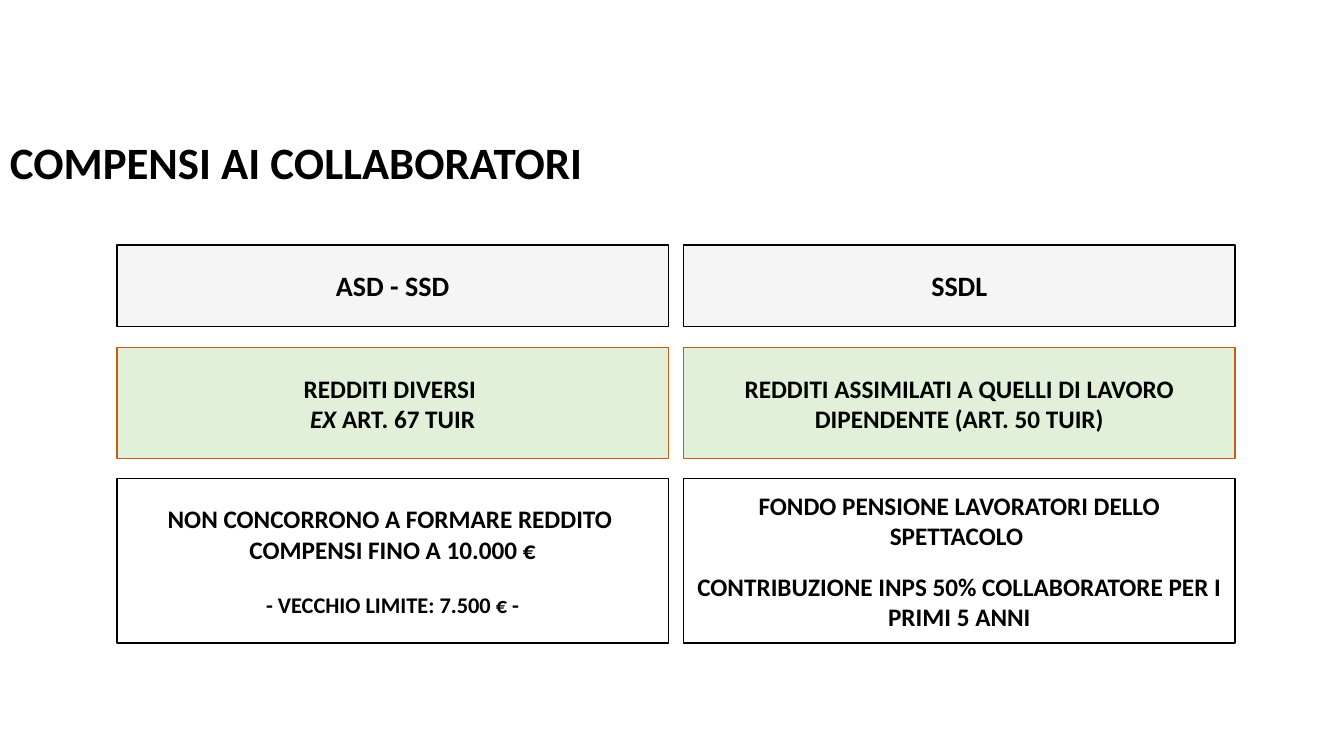
from pptx import Presentation
from pptx.dml.color import RGBColor
from pptx.enum.shapes import MSO_SHAPE
from pptx.enum.text import MSO_ANCHOR, PP_ALIGN
from pptx.util import Inches, Pt

RECT = MSO_SHAPE.RECTANGLE
MIDDLE = MSO_ANCHOR.MIDDLE
LEFT, CENTER = PP_ALIGN.LEFT, PP_ALIGN.CENTER

COLUMN_LEFTS = (1.16, 6.78)
COLUMN_WIDTH = 5.47
ROWS = [
    {"top": 2.43, "height": 0.81, "fill": "F5F5F5", "line": "000000"},
    {"top": 3.45, "height": 1.1, "fill": "E2F0D9", "line": "C55A11"},
    {"top": 4.75, "height": 1.63, "fill": "FFFFFF", "line": "000000"},
]
COLUMNS = [
    [
        [{"runs": [("ASD - SSD", False)], "size": 20}],
        [
            {"runs": [("REDDITI DIVERSI ", False)]},
            {"runs": [("EX", True), (" ART. 67 TUIR", False)]},
        ],
        [
            {"runs": [("NON CONCORRONO A FORMARE REDDITO ", False)]},
            {"runs": [("COMPENSI FINO A 10.000 €", False)]},
            {"runs": [("- VECCHIO LIMITE: 7.500 € -", False)], "size": 16, "before": 19.5},
        ],
    ],
    [
        [{"runs": [("SSDL", False)], "size": 20}],
        [{"runs": [("REDDITI ASSIMILATI A QUELLI DI LAVORO DIPENDENTE (ART. 50 TUIR)", False)]}],
        [
            {"runs": [("FONDO PENSIONE LAVORATORI DELLO SPETTACOLO ", False)]},
            {"runs": [("CONTRIBUZIONE INPS 50% COLLABORATORE PER I PRIMI 5 ANNI", False)],
             "before": 14.6},
        ],
    ],
]


def rgb(value):
    """Turn a hex string into a colour."""
    return RGBColor.from_string(value)


def write(tf, paragraphs, align, spacing=1.0):
    """Fill a text frame with bold, vertically centred paragraphs."""
    tf.word_wrap = True
    tf.vertical_anchor = MIDDLE
    for i, item in enumerate(paragraphs):
        p = tf.add_paragraph() if i else tf.paragraphs[0]
        layout = {"alignment": align, "line_spacing": spacing,
                  "space_before": Pt(item.get("before", 0))}
        for name, value in layout.items():
            setattr(p, name, value)
        for text, italic in item["runs"]:
            r = p.add_run()
            r.text = text
            font = {"name": "Calibri", "size": Pt(item.get("size", 18)),
                    "bold": True, "italic": italic}
            for name, value in font.items():
                setattr(r.font, name, value)
            r.font.color.rgb = rgb("000000")


def add_title(s, left, top, width, height):
    """Place the slide heading in the given box."""
    box = s.shapes.add_textbox(*map(Inches, (left, top, width, height)))
    heading = {"runs": [("COMPENSI AI COLLABORATORI", False)], "size": 32}
    write(box.text_frame, [heading], LEFT, 0.9)


def add_column(s, left, width, cells):
    """Stack one column of outlined boxes, one for each row."""
    for row, paragraphs in zip(ROWS, cells):
        sp = s.shapes.add_shape(
            RECT, *map(Inches, (left, row["top"], width, row["height"])))
        sp.shadow.inherit = False
        sp.fill.solid()
        sp.fill.fore_color.rgb = rgb(row["fill"])
        sp.line.color.rgb = rgb(row["line"])
        sp.line.width = Pt(1)
        write(sp.text_frame, paragraphs, CENTER)


def main():
    """Build and save the presentation."""
    prs = Presentation()
    prs.slide_width, prs.slide_height = Inches(13.33), Inches(7.5)
    s = prs.slides.add_slide(prs.slide_layouts[6])
    add_title(s, 0, 1.34, 13.33, 0.6)
    for left, cells in zip(COLUMN_LEFTS, COLUMNS):
        add_column(s, left, COLUMN_WIDTH, cells)
    prs.save("out.pptx")


if __name__ == "__main__":
    main()
